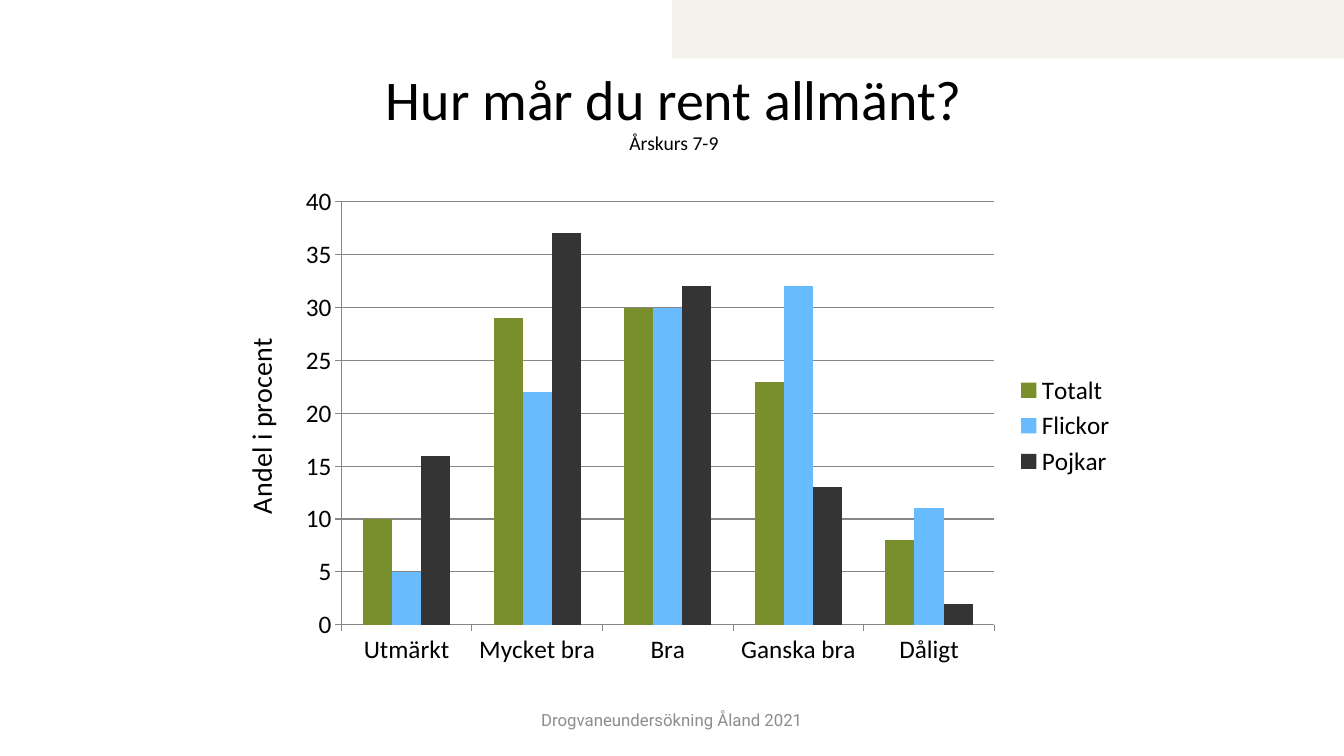
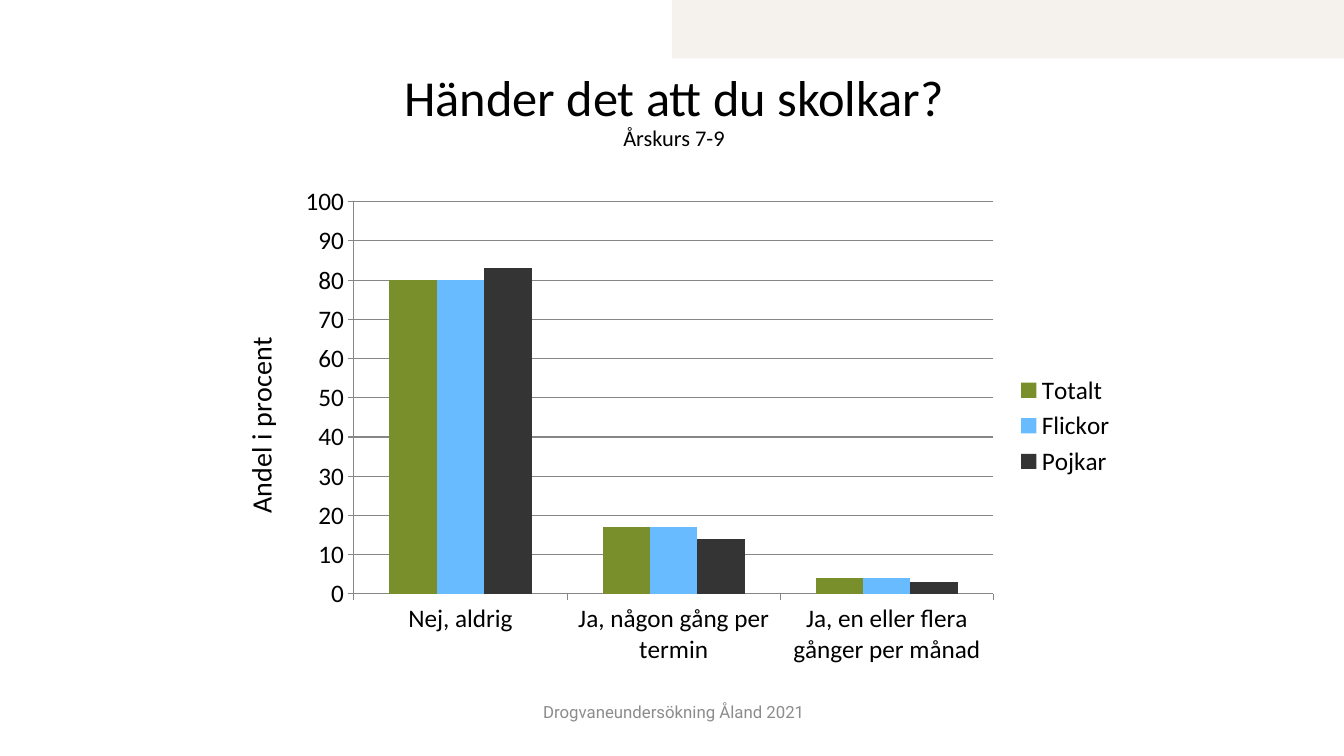
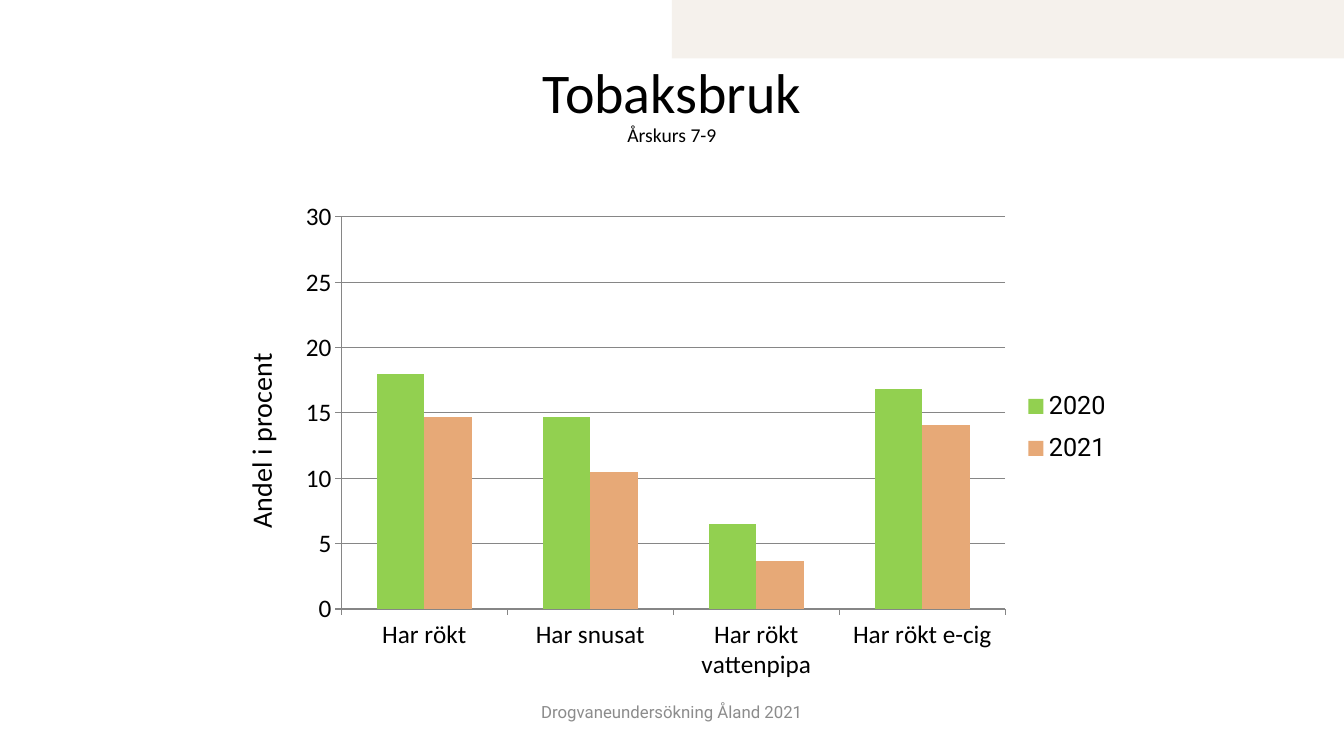
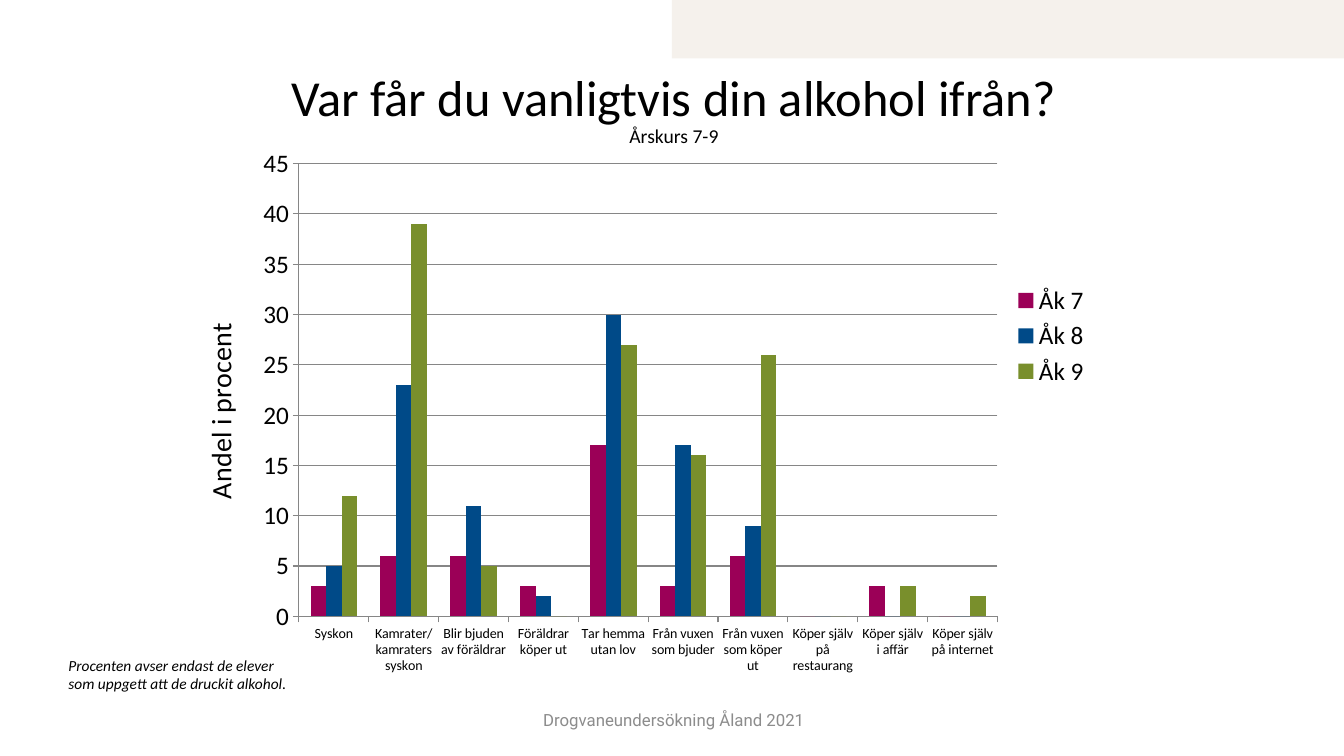
from dataclasses import dataclass
from typing import Optional

import lxml.etree
import pptx
import pptx.chart.data
import pptx.dml.color
import pptx.enum.chart
import pptx.enum.shapes
import pptx.enum.text
import pptx.oxml.ns
import pptx.util

RGB = pptx.dml.color.RGBColor
Pt = pptx.util.Pt
qn = pptx.oxml.ns.qn
Align = pptx.enum.text.PP_ALIGN
Anchor = pptx.enum.text.MSO_ANCHOR
Legend = pptx.enum.chart.XL_LEGEND_POSITION

WIDE, HIGH = pptx.util.Inches(13.33), pptx.util.Inches(7.5)

BLACK = RGB(0x00, 0x00, 0x00)
SAND = RGB(0xF5, 0xF1, 0xEC)
GREY = RGB(0x8C, 0x8C, 0x8C)
RULE = RGB(0x86, 0x86, 0x86)
OLIVE = RGB(0x79, 0x8F, 0x2C)
SKY = RGB(0x69, 0xBB, 0xFF)
COAL = RGB(0x34, 0x34, 0x34)
LIME = RGB(0x92, 0xD0, 0x50)
PEACH = RGB(0xE7, 0xA9, 0x77)
PLUM = RGB(0x9B, 0x00, 0x57)
NAVY = RGB(0x00, 0x4A, 0x88)

HEAD, BODY = "Calibri", "Roboto"
YEARS = "Årskurs 7-9"
FOOTER = "Drogvaneundersökning Åland 2021"


@dataclass(frozen=True)
class Box:
    """A place in percent of the width and height of what holds it."""
    left: float
    top: float
    width: float
    height: float

    def place(self) -> tuple[int, int, int, int]:
        return (int(WIDE * self.left / 100), int(HIGH * self.top / 100),
                int(WIDE * self.width / 100), int(HIGH * self.height / 100))


@dataclass(frozen=True)
class Series:
    name: str
    color: RGB
    values: tuple[float, ...]


@dataclass(frozen=True)
class Page:
    title: str
    labels: tuple[str, ...]
    series: tuple[Series, ...]
    top: int
    step: int
    plot: Box
    foot: Box
    size: int = 40
    small: int = 14
    head: Box = Box(8.85, 9.6, 82.6, 15.2)
    chart: Box = Box(16.28, 23.33, 67.5, 66)
    tick: int = 18
    key: str = HEAD
    side: Legend = Legend.RIGHT
    spot: Optional[Box] = None
    note: str = ""


BAND = Box(50, 0, 50, 7.73)
NOTE = Box(4.35, 86.13, 18.38, 6.27)


def foot(left: float, top: float) -> Box:
    return Box(left, top, 23.78, 5.33)


PAGES = (
    Page("Hur mår du rent allmänt?",
         ("Utmärkt", "Mycket bra", "Bra", "Ganska bra", "Dåligt"),
         (Series("Totalt", OLIVE, (10, 29, 30, 23, 8)),
          Series("Flickor", SKY, (5, 22, 30, 32, 11)),
          Series("Pojkar", COAL, (16, 37, 32, 13, 2))),
         top=40, step=5, plot=Box(13.5, 5.1, 72, 84.8), foot=foot(38.1, 92.53)),
    Page("Händer det att du skolkar?",
         ("Nej, aldrig", "Ja, någon gång per termin",
          "Ja, en eller flera gånger per månad"),
         (Series("Totalt", OLIVE, (80, 17, 4)),
          Series("Flickor", SKY, (80, 17, 4)),
          Series("Pojkar", COAL, (83, 14, 3))),
         top=100, step=10, plot=Box(14.9, 5.1, 70.5, 78.6),
         foot=foot(38.25, 91.47), size=36, small=16),
    Page("Tobaksbruk",
         ("Har rökt", "Har snusat", "Har rökt vattenpipa", "Har rökt e-cig"),
         (Series("2020", LIME, (18, 14.7, 6.5, 16.8)),
          Series("2021", PEACH, (14.7, 10.5, 3.7, 14.1))),
         top=30, step=5, plot=Box(13.5, 5.1, 73.2, 78.6),
         foot=foot(38.1, 91.47), head=Box(19.05, 8.67, 61.9, 21.2),
         chart=Box(16.28, 25.33, 67.5, 66), key=BODY,
         spot=Box(88, 37.6, 11, 19.4)),
    Page("Var får du vanligtvis din alkohol ifrån?",
         ("Syskon", "Kamrater/ kamraters syskon", "Blir bjuden av föräldrar",
          "Föräldrar köper ut", "Tar hemma utan lov", "Från vuxen som bjuder",
          "Från vuxen som köper ut", "Köper själv på restaurang",
          "Köper själv i affär", "Köper själv på internet"),
         (Series("Åk 7", PLUM, (3, 6, 6, 3, 17, 3, 6, 0, 3, 0)),
          Series("Åk 8", NAVY, (5, 23, 11, 2, 30, 17, 9, 0, 0, 0)),
          Series("Åk 9", OLIVE, (12, 39, 5, 0, 27, 16, 26, 0, 3, 2))),
         top=45, step=5, plot=Box(11.4, 5.7, 77, 81.5),
         foot=foot(38.25, 92.53), size=36, chart=Box(14.55, 17.47, 67.5, 73.47),
         tick=10, side=Legend.CORNER, spot=Box(89.8, 26.7, 9, 20),
         note="Procenten avser endast de elever som uppgett att de druckit alkohol."),
)


def style(font, size: int, face: str = HEAD, color: RGB = BLACK) -> None:
    font.size, font.name, font.bold = Pt(size), face, False
    font.color.rgb = color


def draw_title(slide, page: Page) -> None:
    shape = slide.shapes.title
    shape.left, shape.top, shape.width, shape.height = page.head.place()
    frame = shape.text_frame
    frame.margin_left = frame.margin_right = 0
    frame.margin_top = frame.margin_bottom = 0
    frame.vertical_anchor = Anchor.TOP
    frame.auto_size = pptx.enum.text.MSO_AUTO_SIZE.NONE
    para = frame.paragraphs[0]
    para.text = f"{page.title}\v{YEARS}"
    para.alignment, para.line_spacing = Align.CENTER, 0.9
    for run, size in zip(para.runs, (page.size, page.small)):
        style(run.font, size)
    # The line break needs the title's size to keep the line height.
    gap = shape.element.find(".//" + qn("a:br"))
    lxml.etree.SubElement(gap, qn("a:rPr")).set("sz", str(page.size * 100))


def draw_text(slide, box: Box, text: str, size: int, face: str, color: RGB):
    """Add a wrapped text box and return its frame."""
    frame = slide.shapes.add_textbox(*box.place()).text_frame
    frame.word_wrap = True
    frame.text = text
    style(frame.paragraphs[0].runs[0].font, size, face, color)
    return frame


def fix_layout(part, box: Box, inner: bool = False) -> None:
    """Pin a plot area or a legend to a place within its chart."""
    layout = part.find(qn("c:layout"))
    if layout is None:
        layout = lxml.etree.Element(qn("c:layout"))
        part.insert(0, layout)
    manual = lxml.etree.SubElement(layout, qn("c:manualLayout"))
    values = {"layoutTarget": "inner"} if inner else {}
    values |= {"xMode": "edge", "yMode": "edge"}
    for name, share in zip("xywh", (box.left, box.top, box.width, box.height)):
        values[name] = f"{share / 100:.3f}"
    for name, value in values.items():
        lxml.etree.SubElement(manual, qn(f"c:{name}")).set("val", value)


def draw_line(form) -> None:
    form.line.color.rgb = RULE
    form.line.width = Pt(0.75)


def draw_axes(chart, page: Page) -> None:
    for axis, size in ((chart.category_axis, page.tick), (chart.value_axis, 18)):
        style(axis.tick_labels.font, size)
        axis.major_tick_mark = pptx.enum.chart.XL_TICK_MARK.OUTSIDE
        axis.minor_tick_mark = pptx.enum.chart.XL_TICK_MARK.NONE
        draw_line(axis.format)
    axis = chart.value_axis
    axis.minimum_scale, axis.maximum_scale = 0, page.top
    axis.major_unit = page.step
    axis.has_major_gridlines = True
    draw_line(axis.major_gridlines.format)
    frame = axis.axis_title.text_frame
    frame.text = "Andel i procent"
    style(frame.paragraphs[0].runs[0].font, 20)
    body = axis.axis_title.element.find(".//" + qn("a:bodyPr"))
    body.set("rot", "-5400000")
    body.set("vert", "horz")


def draw_chart(slide, page: Page) -> None:
    data = pptx.chart.data.CategoryChartData()
    data.categories = page.labels
    for item in page.series:
        data.add_series(item.name, item.values)
    kind = pptx.enum.chart.XL_CHART_TYPE.COLUMN_CLUSTERED
    chart = slide.shapes.add_chart(kind, *page.chart.place(), data).chart
    style(chart.font, 18, BODY)
    chart.has_title = False
    draw_axes(chart, page)
    plot = chart.plots[0]
    plot.gap_width, plot.overlap, plot.vary_by_categories = 150, 0, False
    for series, item in zip(plot.series, page.series):
        series.format.fill.solid()
        series.format.fill.fore_color.rgb = item.color
    chart.has_legend = True
    chart.legend.position = page.side
    chart.legend.include_in_layout = False
    style(chart.legend.font, 18, page.key)
    fix_layout(chart.element.find(".//" + qn("c:plotArea")), page.plot, inner=True)
    if page.spot:
        fix_layout(chart.element.find(".//" + qn("c:legend")), page.spot)


def add_band(deck, slide) -> None:
    """Draw the top band and move it to the master, behind every slide."""
    rect = pptx.enum.shapes.MSO_SHAPE.RECTANGLE
    band = slide.shapes.add_shape(rect, *BAND.place())
    band.shadow.inherit = False
    band.fill.solid()
    band.fill.fore_color.rgb = SAND
    band.line.fill.background()
    band.element.nvSpPr.cNvPr.set("id", "100")
    deck.slide_master.shapes.element.insert(2, band.element)


def draw_page(slide, page: Page) -> None:
    draw_title(slide, page)
    draw_chart(slide, page)
    if page.note:
        frame = draw_text(slide, NOTE, page.note, 11, HEAD, BLACK)
        frame.paragraphs[0].runs[0].font.italic = True
    frame = draw_text(slide, page.foot, FOOTER, 12, BODY, GREY)
    frame.vertical_anchor = Anchor.MIDDLE
    frame.paragraphs[0].alignment = Align.CENTER


def main() -> None:
    deck = pptx.Presentation()
    deck.slide_width, deck.slide_height = WIDE, HIGH
    layout = deck.slide_layouts.get_by_name("Title Only")
    for page in PAGES:
        draw_page(deck.slides.add_slide(layout), page)
    add_band(deck, deck.slides[0])
    deck.save("out.pptx")


if __name__ == "__main__":
    main()
